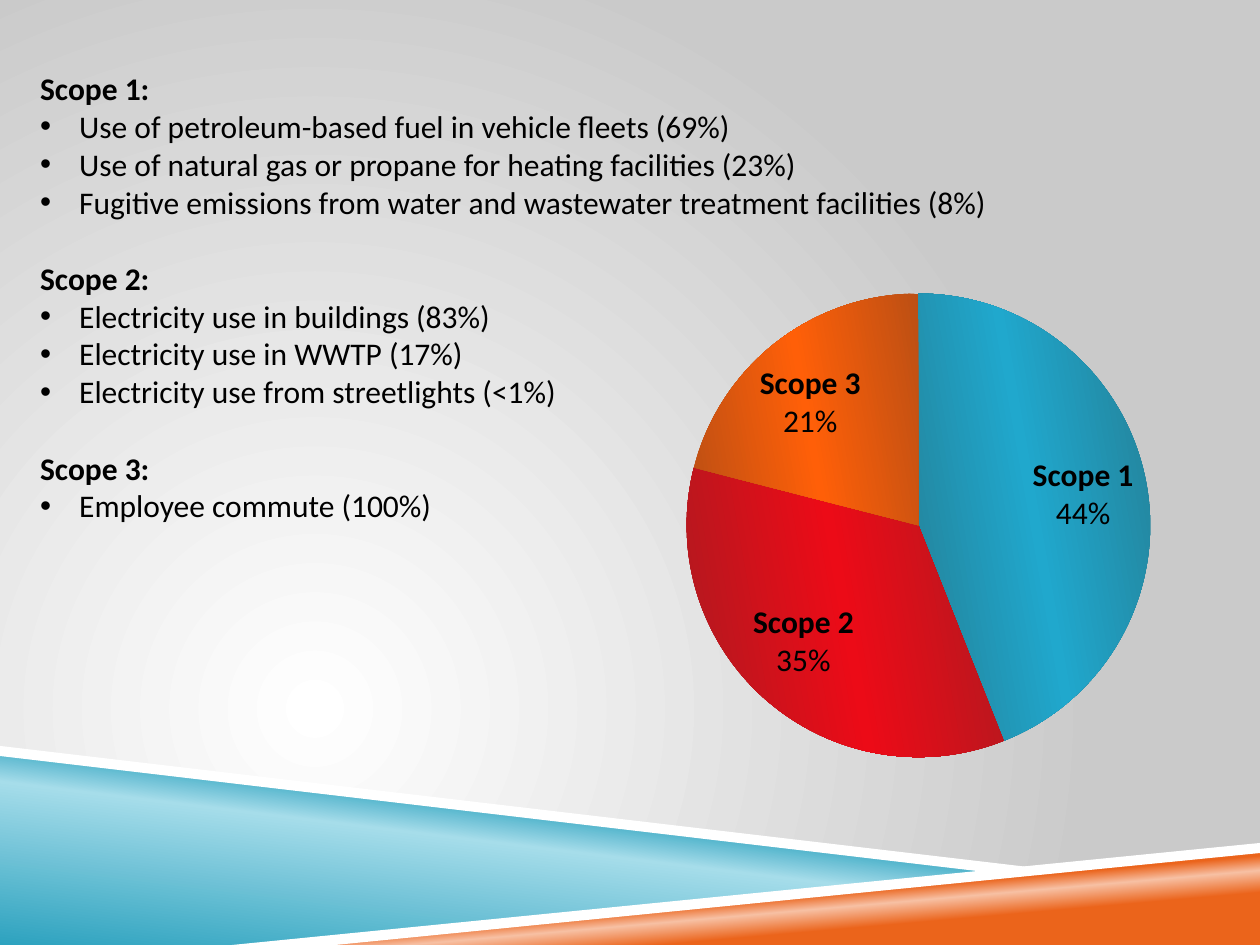
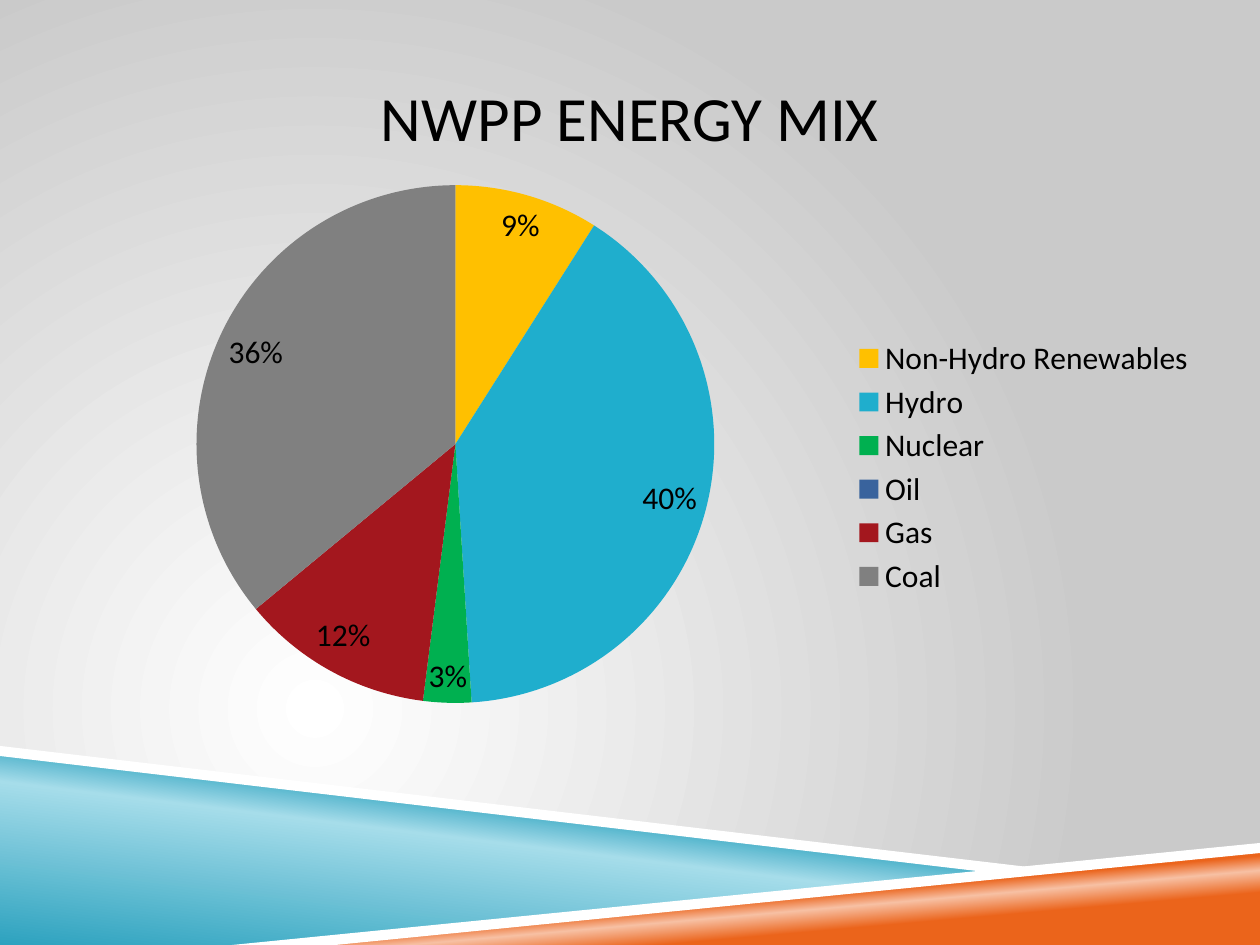
from lxml.etree import SubElement
from pptx import Presentation
from pptx.chart.data import CategoryChartData
from pptx.dml.color import RGBColor
from pptx.enum.chart import XL_CHART_TYPE, XL_LABEL_POSITION, XL_LEGEND_POSITION
from pptx.enum.text import MSO_ANCHOR, PP_ALIGN
from pptx.oxml.ns import qn
from pptx.util import Pt

PX = 9144  # EMU per px, 100 px to the inch
FONT = "Calibri"
BLACK, WHITE = "000000", "FFFFFF"
BODY, HEADING = 18, 36
INDENT = 31

BACKDROP = [(0, WHITE), (100, "CACACA")]
GLOW = {"l": 50, "t": 100, "r": 100, "b": 50}
BLUE = [(0, "2DA2BF"), (52, "A6DDEA"), (66, "2DA2BF")]
ORANGE = [(28, "EB641B"), (40, "F7C1A4"), (48, "EB641B")]
BLUE_WEDGE = [(0, 597), (792, 692), (200, 750), (0, 750)]
ORANGE_WEDGE = [(198, 750), (1000, 672), (1000, 750)]
LEFT_EDGE = [(0, 592), (0, 600), (790, 693), (832, 690)]
RIGHT_EDGE = [(1000, 669), (184, 750), (266, 750), (1000, 677)]

SCOPES = {
    "Scope 1:": [
        "Use of petroleum-based fuel in vehicle fleets (69%)",
        "Use of natural gas or propane for heating facilities (23%)",
        "Fugitive emissions from water and wastewater treatment facilities (8%)",
    ],
    "Scope 2:": [
        "Electricity use in buildings (83%)",
        "Electricity use in WWTP (17%)",
        "Electricity use from streetlights (<1%)",
    ],
    "Scope 3:": ["Employee commute (100%)"],
}
# share, edge colour, middle colour
EMISSIONS = {
    "Scope 1": (44, "247F96", "20A8CD"),
    "Scope 2": (35, "AD1A20", "EC0B17"),
    "Scope 3": (21, "BC4F14", "FF5F08"),
}
ENERGY_MIX = {
    "Non-Hydro Renewables": (9, "FFC000"),
    "Hydro": (40, "1FAECD"),
    "Nuclear": (3, "00B050"),
    "Oil": (0, "39639D"),
    "Gas": (12, "A3171E"),
    "Coal": (36, "808080"),
}


def rgb(color):
    return RGBColor.from_string(color)


def set_font(font, size, bold=False):
    font.name, font.size, font.bold = FONT, Pt(size), bold
    font.color.rgb = rgb(BLACK)


def set_gradient(fill, stops, angle=None):
    """Linear at a clockwise angle in degrees, or the round glow without one."""
    fill.gradient()
    gradient = fill._xPr.find(qn("a:gradFill"))
    for child in list(gradient):
        gradient.remove(child)
    stop_list = SubElement(gradient, qn("a:gsLst"))
    for position, color in stops:
        stop = SubElement(stop_list, qn("a:gs"), pos=str(position * 1000))
        SubElement(stop, qn("a:srgbClr"), val=color)
    if angle is None:
        glow = SubElement(gradient, qn("a:path"), {"path": "circle"})
        SubElement(glow, qn("a:fillToRect"),
                   {side: str(share * 1000) for side, share in GLOW.items()})
    else:
        SubElement(gradient, qn("a:lin"), ang=str(angle * 60000), scaled="0")


def place(parent, index, box, frame):
    """Fix a chart part at box (px on the slide) within the chart's frame."""
    for old in parent.findall(qn("c:layout")):
        parent.remove(old)
    layout = SubElement(parent, qn("c:layout"))
    parent.insert(index, layout)
    manual = SubElement(layout, qn("c:manualLayout"))
    if parent.tag == qn("c:plotArea"):
        SubElement(manual, qn("c:layoutTarget"), val="inner")
    for mode in ("xMode", "yMode"):
        SubElement(manual, qn(f"c:{mode}"), val="edge")
    left, top, width, height = frame
    shares = {"x": (box[0] - left) / width, "y": (box[1] - top) / height,
              "w": box[2] / width, "h": box[3] / height}
    for key, share in shares.items():
        SubElement(manual, qn(f"c:{key}"), val=f"{share:.4f}")


class Deck:
    def __init__(self):
        self.file = Presentation()
        self.file.slide_width, self.file.slide_height = 1000 * PX, 750 * PX
        self.slide = None

    def new_slide(self):
        self.slide = self.file.slides.add_slide(self.file.slide_layouts[6])
        set_gradient(self.slide.background.fill, BACKDROP)
        set_gradient(self.band(BLUE_WEDGE), BLUE, 277)
        set_gradient(self.band(ORANGE_WEDGE), ORANGE, 265)
        for edge in (LEFT_EDGE, RIGHT_EDGE):
            fill = self.band(edge)
            fill.solid()
            fill.fore_color.rgb = rgb(WHITE)

    def band(self, points):
        """Draw a lineless outline and return its fill."""
        outline = self.slide.shapes.build_freeform(*points[0], scale=PX)
        outline.add_line_segments(points[1:], close=True)
        shape = outline.convert_to_shape()
        shape.shadow.inherit = False
        shape.line.fill.background()
        return shape.fill

    def text_frame(self, *box):
        frame = self.slide.shapes.add_textbox(*(n * PX for n in box)).text_frame
        frame.word_wrap = True
        return frame

    def title(self, text):
        frame = self.text_frame(75, 30, 850, 125)
        frame.margin_left = frame.margin_right = 0
        frame.vertical_anchor = MSO_ANCHOR.MIDDLE
        heading = frame.paragraphs[0]
        heading.text, heading.alignment = text, PP_ALIGN.CENTER
        set_font(heading.font, HEADING)

    def grouped_list(self, groups, *box):
        frame = self.text_frame(*box)
        for number, (name, items) in enumerate(groups.items()):
            heading = frame.add_paragraph() if number else frame.paragraphs[0]
            heading.text = name
            if number:
                heading.space_before = Pt(22)
            set_font(heading.font, BODY, bold=True)
            for item in items:
                self.bullet(frame.add_paragraph(), item)

    def bullet(self, paragraph, text):
        paragraph.text = text
        properties = paragraph._p.get_or_add_pPr()
        properties.set("marL", str(INDENT * PX))
        properties.set("indent", str(-INDENT * PX))
        SubElement(properties, qn("a:buFont"), typeface="Arial")
        SubElement(properties, qn("a:buChar"), char="•")
        set_font(paragraph.font, BODY)

    def pie(self, slices, frame, circle):
        data = CategoryChartData()
        data.categories = list(slices)
        data.add_series("Series 1", [share for share, *_ in slices.values()])
        chart = self.slide.shapes.add_chart(
            XL_CHART_TYPE.PIE, *(n * PX for n in frame), data).chart
        chart.has_title = chart.has_legend = False
        set_font(chart.font, BODY)
        place(chart._chartSpace.chart.plotArea, 0, circle, frame)
        plot = chart.plots[0]
        plot.vary_by_categories = True
        plot.has_data_labels = True
        labels = plot.data_labels
        labels.show_percentage, labels.show_value = True, False
        labels.number_format, labels.number_format_is_linked = "0%", False
        labels.position = XL_LABEL_POSITION.BEST_FIT
        for index, (_, edge, *middle) in enumerate(slices.values()):
            style = plot.series[0].points[index].format
            style.line.fill.background()
            if middle:
                set_gradient(style.fill, [(0, edge), (50, middle[0]), (100, edge)], 350)
            else:
                style.fill.solid()
                style.fill.fore_color.rgb = rgb(edge)
        return chart

    def name_slices(self, chart, slices):
        """Label each slice with its name in bold above its share."""
        for index, (name, (share, *_)) in enumerate(slices.items()):
            label = chart.plots[0].series[0].points[index].data_label
            label.text_frame.text = f"{name}\n{share}%"
            for line, paragraph in enumerate(label.text_frame.paragraphs):
                set_font(paragraph.font, BODY, bold=line == 0)
                set_font(paragraph.runs[0].font, BODY, bold=line == 0)
            label.position = XL_LABEL_POSITION.BEST_FIT

    def legend(self, chart, box, frame):
        chart.has_legend = True
        chart.legend.position = XL_LEGEND_POSITION.RIGHT
        chart.legend.include_in_layout = False
        set_font(chart.legend.font, BODY)
        place(chart.legend._element, 1, box, frame)


def main():
    deck = Deck()

    deck.new_slide()
    emissions = deck.pie(EMISSIONS, (283, 175, 843, 478), (545, 233, 368, 368))
    deck.name_slices(emissions, EMISSIONS)
    deck.grouped_list(SCOPES, 22, 50, 958, 374)

    deck.new_slide()
    deck.title("NWPP ENERGY MIX")
    mix_frame = (50, 133, 908, 475)
    energy_mix = deck.pie(ENERGY_MIX, mix_frame, (156, 147, 411, 411))
    deck.legend(energy_mix, (675, 265, 275, 212), mix_frame)

    deck.file.save("out.pptx")


if __name__ == "__main__":
    main()
